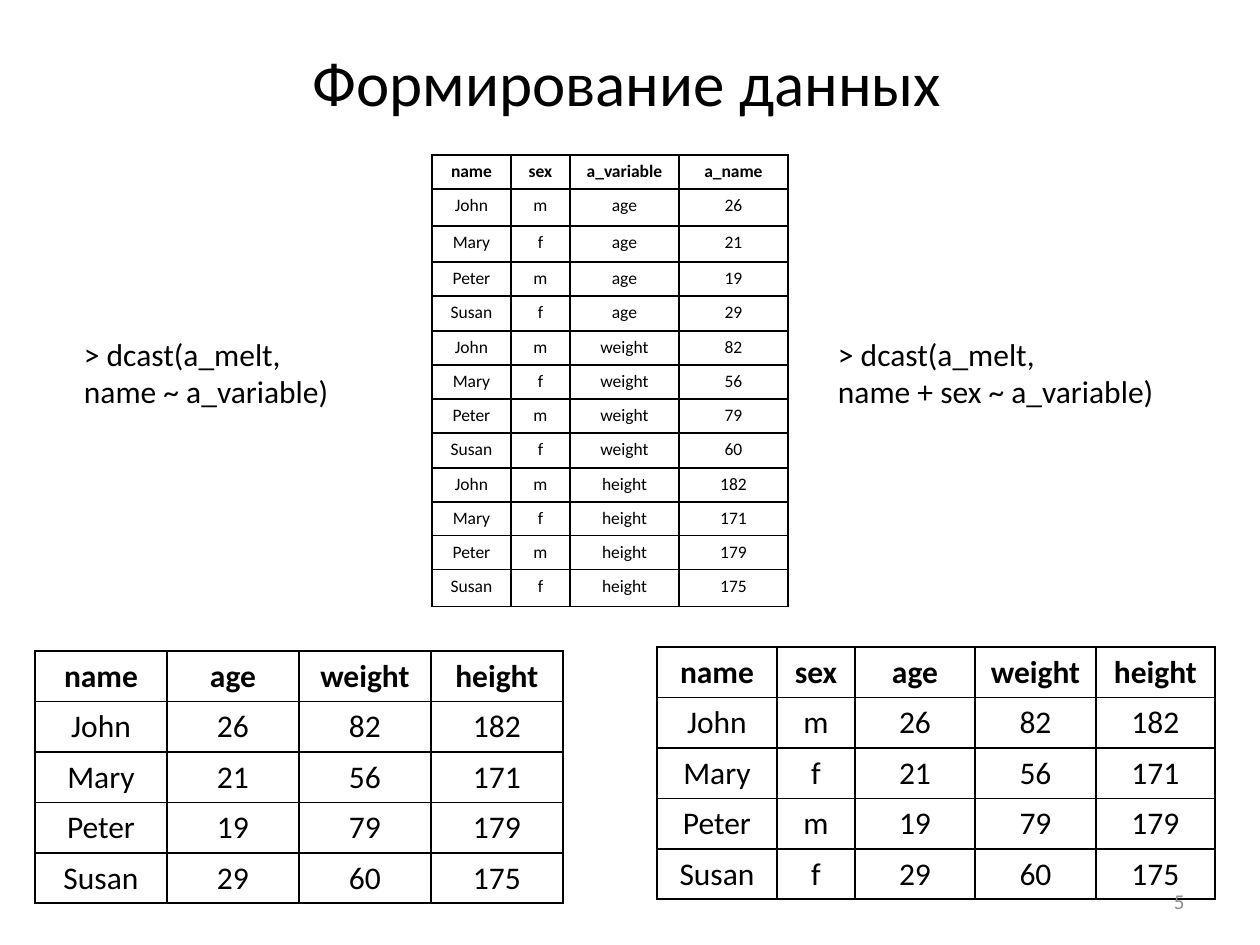
from lxml.etree import SubElement
from pptx import Presentation
from pptx.dml.color import RGBColor
from pptx.enum.shapes import MSO_SHAPE
from pptx.enum.text import MSO_ANCHOR, PP_ALIGN
from pptx.oxml.ns import qn
from pptx.util import Pt

# Content
TITLE = "Формирование данных"
PAGE_NUMBER = "5"
WIDE_CALL = ["> dcast(a_melt,", "name ~ a_variable)"]
WIDE_SEX_CALL = ["> dcast(a_melt,", "name + sex ~ a_variable)"]
MEASURES = ["age", "weight", "height"]
PEOPLE = [
    ("John", "m", 26, 82, 182),
    ("Mary", "f", 21, 56, 171),
    ("Peter", "m", 19, 79, 179),
    ("Susan", "f", 29, 60, 175),
]

# The three shapes of the same data
wide_rows = [["name", *MEASURES]] + [[name, *values] for name, sex, *values in PEOPLE]
wide_sex_rows = [["name", "sex", *MEASURES]] + PEOPLE
melted_rows = [["name", "sex", "a_variable", "a_name"]] + [
    [name, sex, measure, values[index]]
    for index, measure in enumerate(MEASURES)
    for name, sex, *values in PEOPLE
]

# Layout in px, 126 to the inch
PX = 914400 // 126
FONT = "Calibri"
BLACK, WHITE, GREY = "000000", "FFFFFF", "8C8C8C"
MELTED_HEIGHTS = [34, 37, 36, 34, 35, 34, 34, 34, 35, 34, 34, 34, 37]


def color(value):
    return RGBColor.from_string(value)


def write(frame, lines, size, ink=BLACK, align=PP_ALIGN.LEFT, bold=False):
    frame.text = "\n".join(lines)
    for paragraph in frame.paragraphs:
        paragraph.alignment = align
        for span in paragraph.runs:
            span.font.name = FONT
            span.font.size = Pt(size)
            span.font.bold = bold
            span.font.color.rgb = color(ink)


def add_text(page, bounds, text, size, ink, align, anchor):
    box = page.shapes.add_textbox(*(value * PX for value in bounds))
    box.text_frame.word_wrap = True
    box.text_frame.vertical_anchor = anchor
    write(box.text_frame, [text], size, ink, align)


def add_call(page, left, lines):
    box = page.shapes.add_shape(MSO_SHAPE.RECTANGLE, left * PX, 334 * PX, 377 * PX, 77 * PX)
    box.shadow.inherit = False
    box.fill.solid()
    box.fill.fore_color.rgb = color(WHITE)
    box.line.fill.background()
    frame = box.text_frame
    frame.word_wrap = True
    frame.vertical_anchor = MSO_ANCHOR.MIDDLE
    frame.margin_left = frame.margin_right = frame.margin_top = frame.margin_bottom = 0
    write(frame, lines, 18)


def add_borders(cell):
    properties = cell._tc.get_or_add_tcPr()
    for position, side in enumerate(("lnL", "lnR", "lnT", "lnB")):
        line = properties.makeelement(qn(f"a:{side}"), {"w": str(Pt(1))})
        properties.insert(position, line)
        fill = SubElement(line, qn("a:solidFill"))
        SubElement(fill, qn("a:srgbClr"), val=BLACK)


def add_grid(page, left, top, widths, heights, rows, size):
    table = page.shapes.add_table(
        len(rows), len(widths), left * PX, top * PX, sum(widths) * PX, sum(heights) * PX
    ).table
    table.horz_banding = False
    for column, width in zip(table.columns, widths):
        column.width = width * PX
    for row_index, (values, height) in enumerate(zip(rows, heights)):
        table.rows[row_index].height = height * PX
        for column_index, value in enumerate(values):
            cell = table.cell(row_index, column_index)
            cell.fill.background()
            add_borders(cell)
            write(cell.text_frame, [str(value)], size, BLACK, PP_ALIGN.CENTER, row_index == 0)


def main():
    deck = Presentation()
    deck.slide_width, deck.slide_height = 1260 * PX, 945 * PX
    page = deck.slides.add_slide(deck.slide_layouts[6])

    # Left call and title
    add_call(page, 84, WIDE_CALL)
    add_text(page, (-3, 37, 1260, 89), TITLE, 36, BLACK, PP_ALIGN.CENTER, MSO_ANCHOR.TOP)

    # Wide results below, melted source in the middle
    add_grid(page, 35, 651, [132] * 4, [50] * 5, wide_rows, 18)
    add_grid(page, 657, 647, [120, 78, 120, 121, 119], [50] * 5, wide_sex_rows, 18)
    add_grid(page, 432, 155, [79, 59, 109, 109], MELTED_HEIGHTS, melted_rows, 10)

    # Right call and page number
    add_call(page, 838, WIDE_SEX_CALL)
    add_text(page, (903, 876, 294, 50), PAGE_NUMBER, 12, GREY, PP_ALIGN.RIGHT, MSO_ANCHOR.MIDDLE)

    deck.save("out.pptx")


if __name__ == "__main__":
    main()
